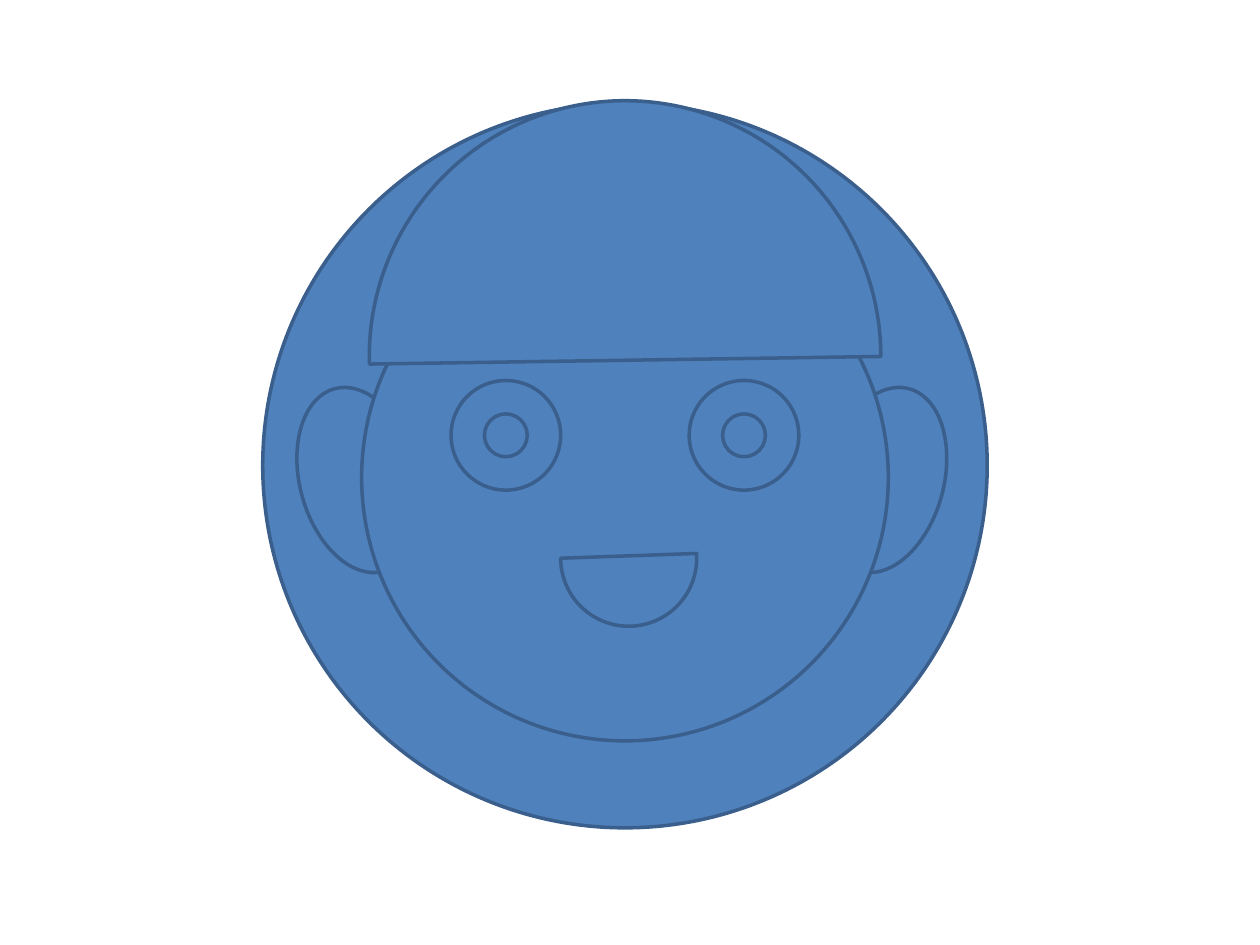
from dataclasses import dataclass

from pptx import Presentation
from pptx import util as u
from pptx.dml.color import RGBColor
from pptx.enum import shapes

# The slide is a grid of 100 columns by 75 rows of square cells
COLUMNS, ROWS = 100, 75
CELL = u.Inches(0.1)
FILL, OUTLINE = "4F81BD", "3A5F8C"
LINE_WIDTH = u.Pt(2)
CHORD_END = 270  # degrees


@dataclass(frozen=True)
class Part:
    """A shape placed by its centre, in grid cells; angles in degrees."""
    column: float
    row: float
    width: float
    height: float
    rotation: float = 0
    chord_start: float | None = None


def cells(count: float) -> int:
    return round(count * CELL)


def color(value: str) -> RGBColor:
    return RGBColor.from_string(value)


def draw(page, part: Part) -> None:
    is_chord = part.chord_start is not None
    kind = shapes.MSO_SHAPE.CHORD if is_chord else shapes.MSO_SHAPE.OVAL
    shape = page.shapes.add_shape(
        kind,
        cells(part.column - part.width / 2), cells(part.row - part.height / 2),
        cells(part.width), cells(part.height))
    shape.rotation = part.rotation
    if is_chord:
        # Adjustments count 0.6 for each degree
        for index, angle in enumerate((part.chord_start, CHORD_END)):
            shape.adjustments[index] = angle * 0.6
    shape.shadow.inherit = False
    shape.fill.solid()
    shape.fill.fore_color.rgb = color(FILL)
    shape.line.color.rgb = color(OUTLINE)
    shape.line.width = LINE_WIDTH


def disc(column: float, row: float, size: float) -> Part:
    return Part(column, row, size, size)


def half_disc(column: float, row: float, size: float,
              rotation: float, start: float) -> Part:
    return Part(column, row, size, size, rotation, start)


def face_parts() -> list[Part]:
    axis = 49.6
    sides = (-1, 1)
    hair = disc(axis, 36.95, 57.5)
    ears = [Part(49.35 + side * 20.85, 38.1, 9.4, 15, side * 15 % 360)
            for side in sides]
    face = disc(axis, 37.9, 41.8)
    # Each eye is a ring with its pupil
    eyes = [disc(axis + side * 9.45, 34.55, size)
            for side in sides for size in (8.7, 3.4)]
    mouth = half_disc(49.9, 44.3, 10.8, 270, 86)
    fringe = half_disc(axis, 28.3, 40.6, 90, 88.3)
    return [hair, *ears, face, *eyes, mouth, fringe]


def main() -> None:
    deck = Presentation()
    size = {"slide_width": COLUMNS * CELL, "slide_height": ROWS * CELL}
    for name, value in size.items():
        setattr(deck, name, value)
    page = deck.slides.add_slide(deck.slide_layouts[6])
    for part in face_parts():
        draw(page, part)
    deck.save("out.pptx")


if __name__ == "__main__":
    main()
